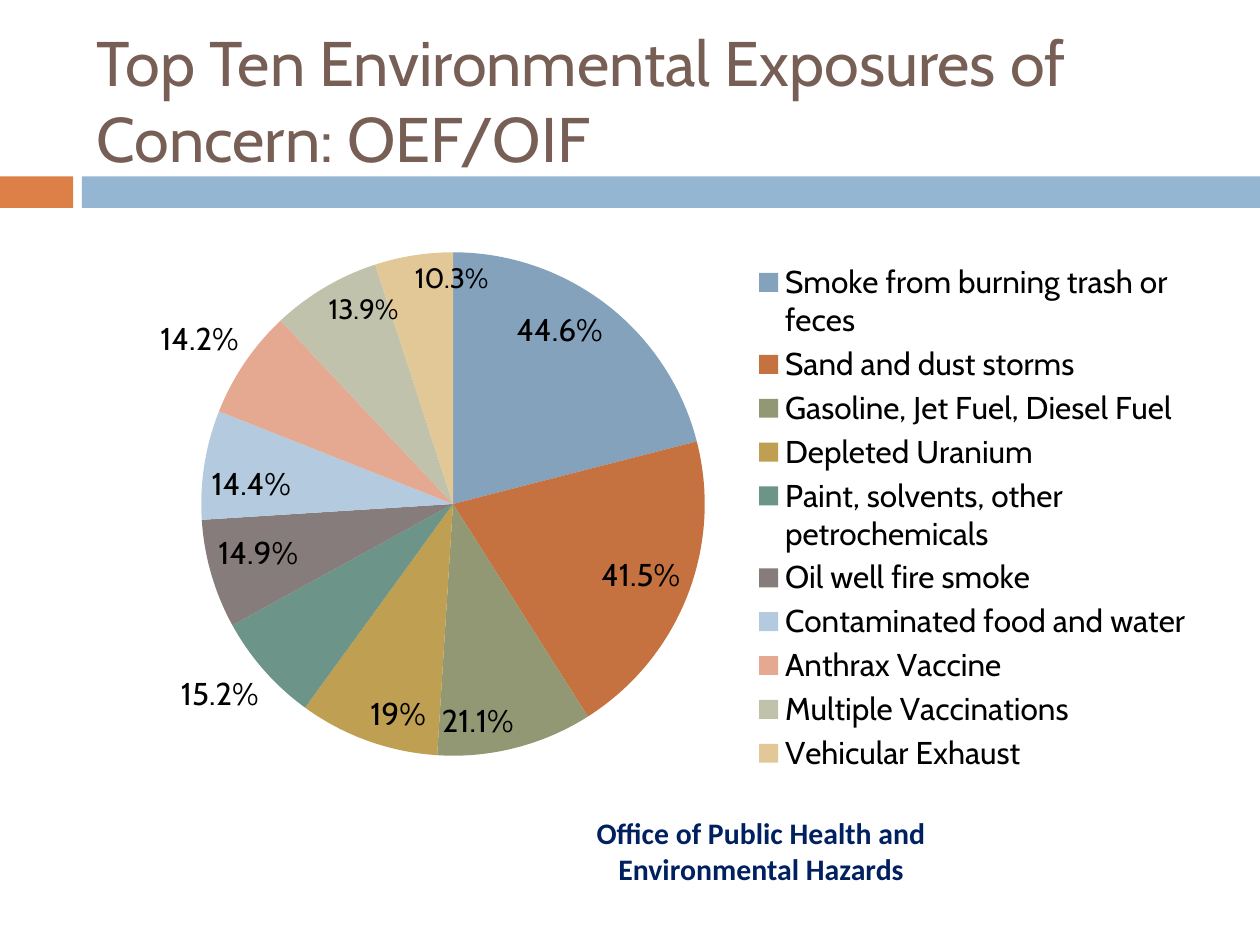
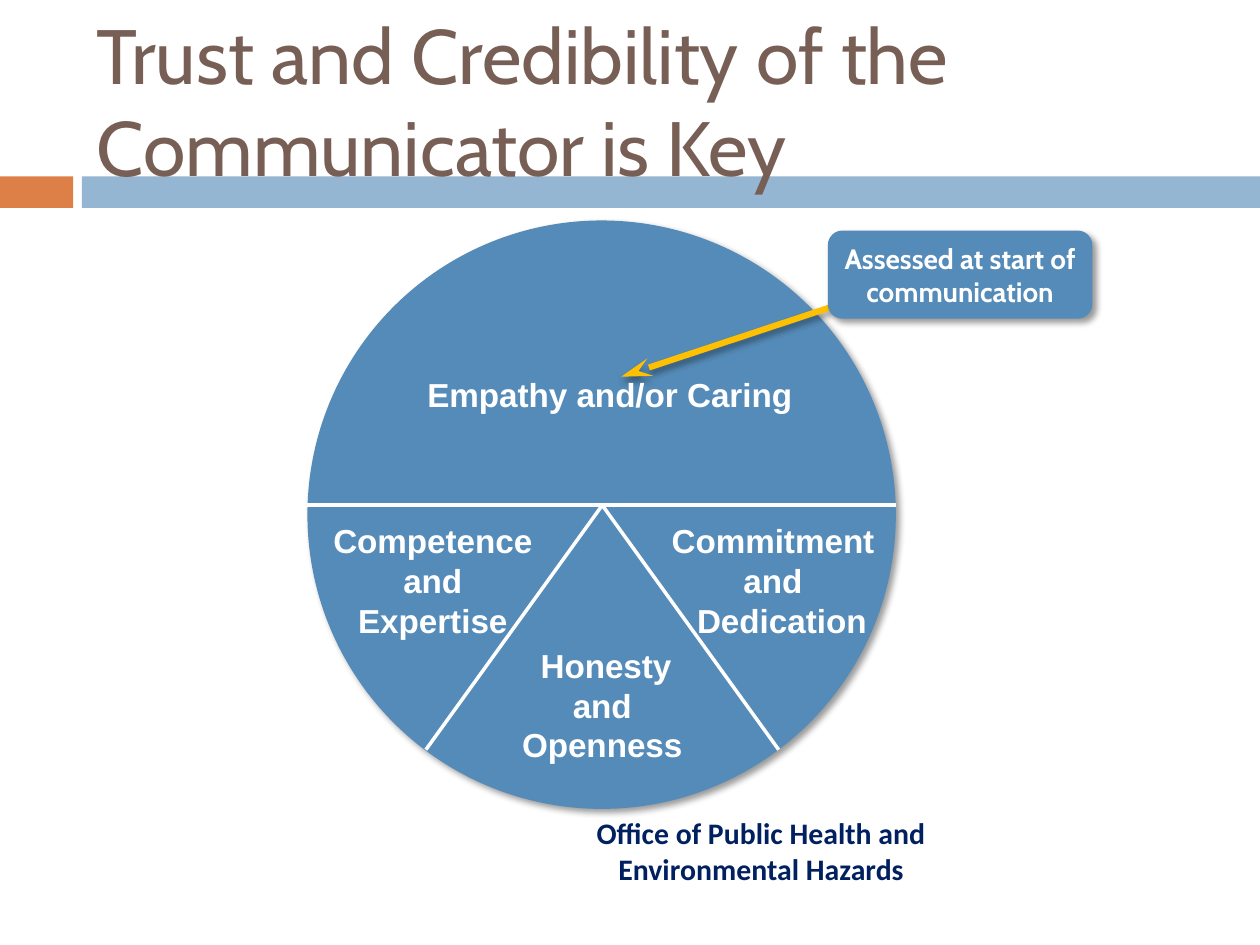
"""Build two slides on environmental exposures and communicator trust."""
from dataclasses import dataclass

from lxml import etree
from pptx import Presentation
from pptx import util as u
from pptx.chart import data
from pptx.dml.color import RGBColor
from pptx.enum import chart as ch
from pptx.enum import shapes, text
from pptx.oxml import ns


@dataclass(frozen=True)
class Theme:
    orange: str = "DD8047"
    band: str = "94B6D2"
    title: str = "775F55"
    footer: str = "002060"
    disc: str = "558BB8"
    arrow: str = "FFC000"
    white: str = "FFFFFF"
    black: str = "000000"
    slices: tuple = ("84A2BC", "C57240", "929873", "BF9F51", "6C9489",
                     "857C7B", "B4CBDF", "E5A992", "C0C2AB", "E2C797")
    heading_font: str = "Cabin"
    footer_font: str = "Calibri"
    disc_font: str = "Arial"
    footer_size: int = 17
    chart_size: int = 18
    small_label_size: int = 16
    disc_size: int = 19
    callout_size: int = 16


T = Theme()


def add_text(sp, lines, font, size, color, bold=False, align=text.PP_ALIGN.CENTER,
             anchor=text.MSO_ANCHOR.TOP):
    tf = sp.text_frame
    tf.word_wrap = True
    tf.vertical_anchor = anchor
    tf.text = "\n".join(lines)
    for p in tf.paragraphs:
        p.alignment = align
        p.font.name, p.font.size, p.font.bold = font, u.Pt(size), bold
        p.font.color.rgb = RGBColor.from_string(color)
    return tf


def set_shadow(sp, angle=None):
    pr = sp._element.spPr
    for old in pr.findall(ns.qn("a:effectLst")):
        pr.remove(old)
    effects = etree.SubElement(pr, ns.qn("a:effectLst"))
    if angle is not None:
        shadow = etree.SubElement(effects, ns.qn("a:outerShdw"), blurRad=str(u.Pt(4)),
                                  dist=str(u.Pt(3)), dir=str(angle * 60000),
                                  algn="tl", rotWithShape="0")
        color = etree.SubElement(shadow, ns.qn("a:srgbClr"), val=T.black)
        etree.SubElement(color, ns.qn("a:alpha"), val="40000")


prs = Presentation()
prs.slide_width, prs.slide_height = u.Inches(10), u.Inches(7.5)

slides = []
for title, size in (("Top Ten Environmental Exposures of Concern: OEF/OIF", 36),
                    ("Trust and Credibility of the Communicator is Key", 44)):
    s = prs.slides.add_slide(prs.slide_layouts[6])
    slides.append(s)
    for left, width, color in ((0, 0.58, T.orange), (0.65, 9.35, T.band)):
        sp = s.shapes.add_shape(shapes.MSO_SHAPE.RECTANGLE, u.Inches(left), u.Inches(1.4),
                                u.Inches(width), u.Inches(0.25))
        sp.shadow.inherit = False
        sp.fill.solid()
        sp.fill.fore_color.rgb = RGBColor.from_string(color)
        sp.line.fill.background()
    sp = s.shapes.add_textbox(u.Inches(4.58), u.Inches(6.42), u.Inches(2.92), u.Inches(0.67))
    add_text(sp, ["Office of Public Health and Environmental Hazards"],
             T.footer_font, T.footer_size, T.footer, bold=True)
    sp = s.shapes.add_textbox(u.Inches(0.67), u.Inches(0.25), u.Inches(8.92), u.Inches(1.08))
    add_text(sp, [title], T.heading_font, size, T.title,
             align=text.PP_ALIGN.LEFT, anchor=text.MSO_ANCHOR.MIDDLE)

exposure_slide, trust_slide = slides

inside, outside = ch.XL_LABEL_POSITION.INSIDE_END, ch.XL_LABEL_POSITION.OUTSIDE_END
exposures = (
    ("Smoke from burning trash or feces", 21, "44.6%", inside, T.chart_size),
    ("Sand and dust storms", 20, "41.5%", inside, T.chart_size),
    ("Gasoline, Jet Fuel, Diesel Fuel", 10, "21.1%", inside, T.chart_size),
    ("Depleted Uranium", 9, "19%", inside, T.chart_size),
    ("Paint, solvents, other petrochemicals", 7, "15.2%", outside, T.chart_size),
    ("Oil well fire smoke", 7, "14.9%", inside, T.chart_size),
    ("Contaminated food and water", 7, "14.4%", inside, T.chart_size),
    ("Anthrax Vaccine", 7, "14.2%", outside, T.chart_size),
    ("Multiple Vaccinations", 7, "13.9%", inside, T.small_label_size),
    ("Vehicular Exhaust", 5, "10.3%", inside, T.small_label_size),
)
chart_data = data.CategoryChartData()
chart_data.categories = [row[0] for row in exposures]
chart_data.add_series("Series 1", [row[1] for row in exposures])
chart = exposure_slide.shapes.add_chart(
    ch.XL_CHART_TYPE.PIE, u.Inches(0.67), u.Inches(1.75), u.Inches(8.92), u.Inches(4.92),
    chart_data).chart
chart.has_title = False
chart.font.name, chart.font.size = T.heading_font, u.Pt(T.chart_size)
chart.font.color.rgb = RGBColor.from_string(T.black)
chart.has_legend = True
chart.legend.position = ch.XL_LEGEND_POSITION.RIGHT
chart.legend.include_in_layout = False

plot = chart.plots[0]
plot.vary_by_categories = True
plot.has_data_labels = True
plot.data_labels.show_percentage = True
for i, (_, _, label, position, size) in enumerate(exposures):
    point = plot.series[0].points[i]
    point.format.fill.solid()
    point.format.fill.fore_color.rgb = RGBColor.from_string(T.slices[i])
    point.format.line.fill.background()
    tf = point.data_label.text_frame
    tf.text = label
    font = tf.paragraphs[0].runs[0].font
    font.name, font.size = T.heading_font, u.Pt(size)
    font.color.rgb = RGBColor.from_string(T.black)
    point.data_label.position = position

for parent, index, target, box in (
        (chart._chartSpace.chart.plotArea, 0, "inner", (0.104, 0.051, 0.448, 0.813)),
        (chart.legend._element, 1, None, (0.59, 0.06, 0.4, 0.84))):
    for old in parent.findall(ns.qn("c:layout")):
        parent.remove(old)
    layout = etree.Element(ns.qn("c:layout"))
    manual = etree.SubElement(layout, ns.qn("c:manualLayout"))
    if target:
        etree.SubElement(manual, ns.qn("c:layoutTarget"), val=target)
    for tag in ("xMode", "yMode"):
        etree.SubElement(manual, ns.qn("c:" + tag), val="edge")
    for tag, value in zip("xywh", box):
        etree.SubElement(manual, ns.qn("c:" + tag), val=str(value))
    parent.insert(index, layout)

disc = trust_slide.shapes.add_shape(shapes.MSO_SHAPE.OVAL, u.Inches(2.44), u.Inches(1.75),
                                    u.Inches(4.67), u.Inches(4.67))
disc.fill.solid()
disc.fill.fore_color.rgb = RGBColor.from_string(T.disc)
disc.line.fill.background()
set_shadow(disc, 45)

for x1, y1, x2, y2, color, width in (
        (2.44, 4.01, 7.11, 4.01, T.white, 2),
        (4.78, 4.01, 3.38, 5.95, T.white, 2),
        (4.78, 4.01, 6.18, 5.95, T.white, 2),
        (6.8, 2.37, 4.93, 2.99, T.arrow, 3.5)):
    line = trust_slide.shapes.add_connector(shapes.MSO_CONNECTOR.STRAIGHT, u.Inches(x1),
                                            u.Inches(y1), u.Inches(x2), u.Inches(y2))
    line.line.color.rgb = RGBColor.from_string(color)
    line.line.width = u.Pt(width)
    is_arrow = color == T.arrow
    set_shadow(line, 90 if is_arrow else None)
    if is_arrow:
        etree.SubElement(line.line._get_or_add_ln(), ns.qn("a:tailEnd"),
                         type="stealth", w="med", len="lg")

for left, top, width, height, lines, shifted, indent in (
        (3.07, 2.92, 3.54, 0.42, ["Empathy and/or Caring"], 0, 0),
        (2.48, 4.08, 1.91, 1.06, ["Competence", "and", "Expertise"], 0, 0),
        (4.03, 5.07, 1.5, 1.06, ["Honesty", "and", "Openness"], 0, 0.06),
        (5.22, 4.08, 1.83, 1.06, ["Commitment", "and", "Dedication"], 2, 0.14)):
    sp = trust_slide.shapes.add_textbox(u.Inches(left), u.Inches(top),
                                        u.Inches(width), u.Inches(height))
    tf = add_text(sp, lines, T.disc_font, T.disc_size, T.white, bold=True)
    tf.margin_left = tf.margin_right = 0
    tf.paragraphs[shifted]._p.get_or_add_pPr().set("marL", str(u.Inches(indent)))

callout = trust_slide.shapes.add_shape(shapes.MSO_SHAPE.ROUNDED_RECTANGLE, u.Inches(6.57),
                                       u.Inches(1.83), u.Inches(2.1), u.Inches(0.7))
callout.fill.solid()
callout.fill.fore_color.rgb = RGBColor.from_string(T.disc)
callout.line.fill.background()
set_shadow(callout, 45)
add_text(callout, ["Assessed at start of communication"], T.heading_font, T.callout_size,
         T.white, bold=True, anchor=text.MSO_ANCHOR.MIDDLE)

prs.save("out.pptx")
